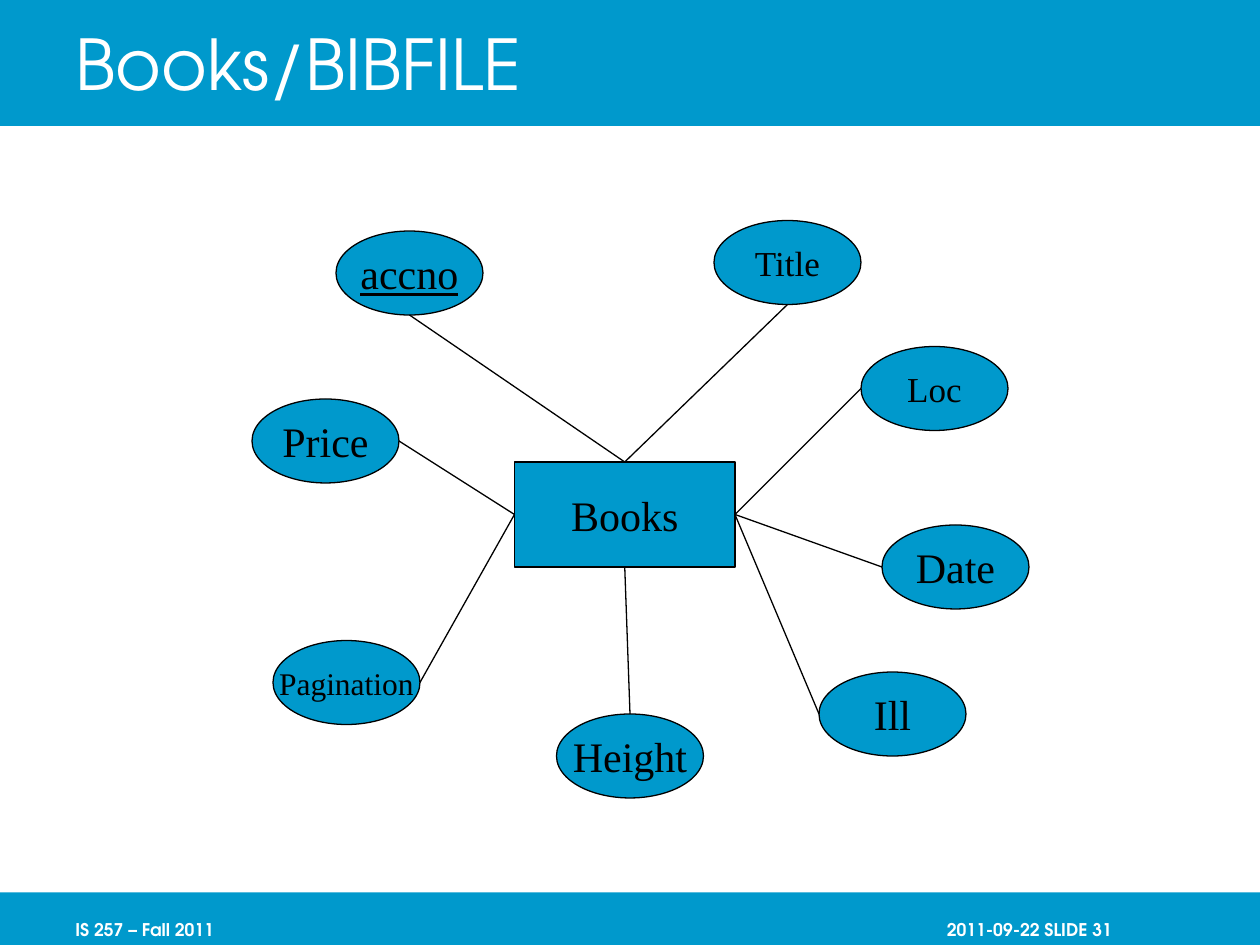
from lxml.etree import SubElement
from pptx import Presentation
from pptx.dml.color import RGBColor
from pptx.enum.shapes import MSO_CONNECTOR, MSO_SHAPE
from pptx.enum.text import MSO_ANCHOR, PP_ALIGN
from pptx.oxml.ns import qn
from pptx.util import Inches, Pt

BLUE = RGBColor(0x00, 0x99, 0xCC)
WHITE = RGBColor(0xFF, 0xFF, 0xFF)
BLACK = RGBColor(0x00, 0x00, 0x00)
HEADING_FONT = "TeX Gyre Adventor"
DIAGRAM_FONT = "Times New Roman"

# The slide is a grid of 120 columns by 90 rows
UNIT = Inches(10) // 120
ENTITY = ("Books", 49, 44)
ENTITY_SIZE = (21, 10)
ATTRIBUTE_SIZE = (14, 8)

# Attribute: text, column, row, font size, its side and the entity side it joins
ATTRIBUTES = [
    ("accno", 32, 22, 24, "bottom", "top"),
    ("Title", 68, 21, 20, "bottom", "top"),
    ("Loc", 82, 33, 20, "left", "right"),
    ("Date", 84, 50, 24, "left", "right"),
    ("Price", 24, 38, 24, "right", "left"),
    ("Pagination", 26, 61, 18, "right", "left"),
    ("Height", 53, 68, 24, "top", "bottom"),
    ("Ill", 78, 64, 24, "left", "right"),
]
SIDES = {"top": (0.5, 0), "bottom": (0.5, 1), "left": (0, 0.5), "right": (1, 0.5)}


def grid(*values):
    return [round(value * UNIT) for value in values]


def write(shape, text, size, font_name, color, alignment, anchor, wrap=True, **extra):
    frame = shape.text_frame
    frame.word_wrap = wrap
    frame.vertical_anchor = anchor
    paragraph = frame.paragraphs[0]
    paragraph.alignment = alignment
    run = paragraph.add_run()
    run.text = text
    run.font.color.rgb = color
    formats = {"name": font_name, "size": Pt(size), **extra}
    for name, value in formats.items():
        setattr(run.font, name, value)


def add_block(slide, kind, box, outlined=False):
    shape = slide.shapes.add_shape(kind, *grid(*box))
    shape.shadow.inherit = False
    shape.fill.solid()
    shape.fill.fore_color.rgb = BLUE
    if outlined:
        shape.line.color.rgb = BLACK
        shape.line.width = Pt(0.75)
    else:
        shape.line.fill.background()
    return shape


def add_header(slide, box):
    left, top, width, height = box
    band = add_block(slide, MSO_SHAPE.RECTANGLE, box)
    title = slide.shapes.title
    # Keep the title in front of its band
    band._element.addnext(title._element)
    title_box = grid(left + width * 0.05, top, width * 0.85, height)
    for name, value in zip(("left", "top", "width", "height"), title_box):
        setattr(title, name, value)
    write(title, "Books/BIBFILE", 40, HEADING_FONT, WHITE, PP_ALIGN.LEFT, MSO_ANCHOR.MIDDLE)


def add_footer(slide, box):
    left, top, width, height = box
    add_block(slide, MSO_SHAPE.RECTANGLE, box)
    labels = [
        ("IS 257 – Fall 2011", 0.05, PP_ALIGN.LEFT),
        ("2011-09-22 SLIDE 31", 0.674, PP_ALIGN.RIGHT),
    ]
    for text, share, alignment in labels:
        label = slide.shapes.add_textbox(*grid(left + width * share, top, 25, height))
        label.text_frame.margin_right = 0
        label.text_frame.margin_bottom = Inches(0.04)
        write(label, text, 10, HEADING_FONT, WHITE, alignment, MSO_ANCHOR.BOTTOM, bold=True)


def add_node(slide, kind, box, text, size, underline=None):
    node = add_block(slide, kind, box, outlined=True)
    write(node, text, size, DIAGRAM_FONT, BLACK, PP_ALIGN.CENTER, MSO_ANCHOR.MIDDLE,
          wrap=False, underline=underline)


def side_point(box, side):
    left, top, width, height = box
    across, down = SIDES[side]
    return left + width * across, top + height * down


def add_link(slide, start, end):
    link = slide.shapes.add_connector(MSO_CONNECTOR.STRAIGHT, *grid(*start, *end))
    link.line.color.rgb = BLACK
    link.line.width = Pt(0.75)
    SubElement(link._element.spPr, qn("a:effectLst"))


def add_diagram(slide, origin):
    left, top = origin
    name, column, row = ENTITY
    entity_box = (left + column, top + row, *ENTITY_SIZE)
    add_node(slide, MSO_SHAPE.RECTANGLE, entity_box, name, 24)
    for text, column, row, size, side, entity_side in ATTRIBUTES:
        box = (left + column, top + row, *ATTRIBUTE_SIZE)
        # The key attribute is underlined
        add_node(slide, MSO_SHAPE.OVAL, box, text, size, underline=text == "accno")
        add_link(slide, side_point(box, side), side_point(entity_box, entity_side))


def main():
    presentation = Presentation()
    presentation.slide_width = Inches(10)
    presentation.slide_height = Inches(7.5)
    slide = presentation.slides.add_slide(presentation.slide_layouts[5])
    add_header(slide, (0, 0, 120, 12))
    add_footer(slide, (0, 85, 120, 5))
    add_diagram(slide, (0, 0))
    presentation.save("out.pptx")


if __name__ == "__main__":
    main()
